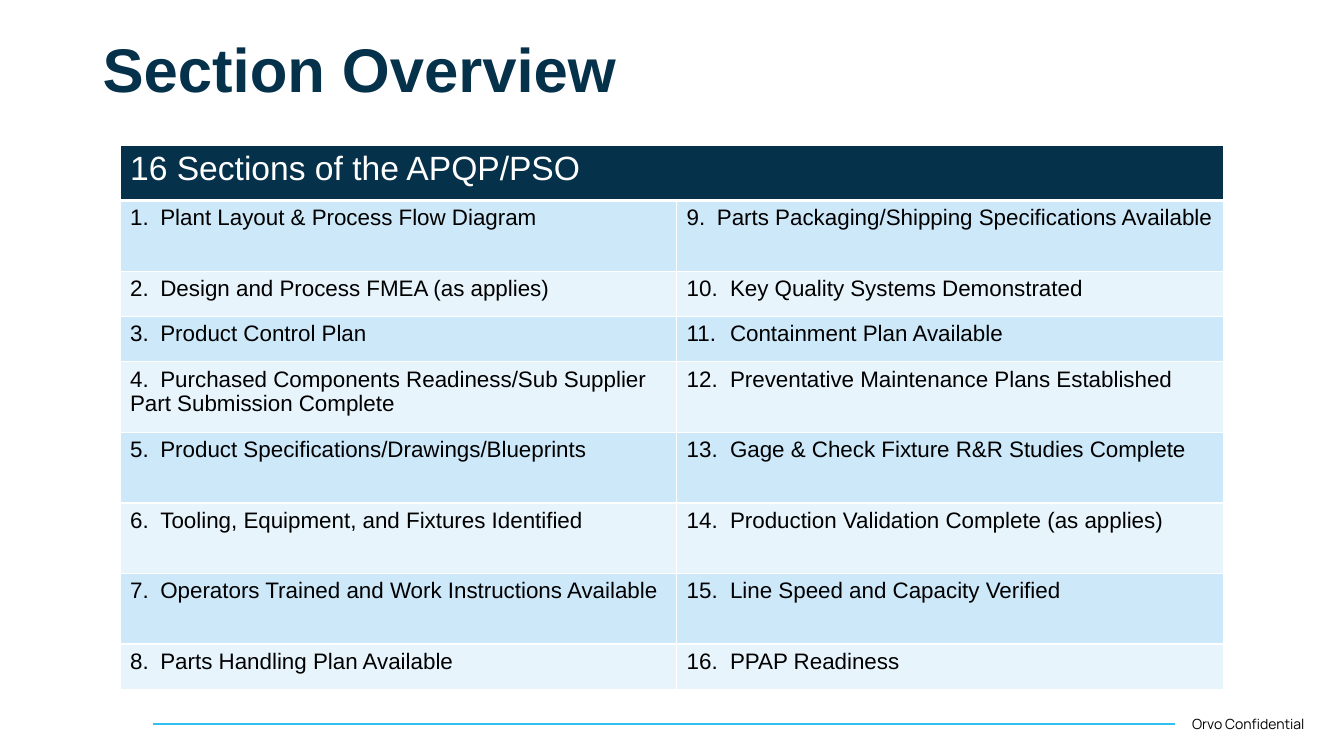
from dataclasses import dataclass

from lxml import etree
from pptx import Presentation
from pptx import util as u
from pptx.dml.color import RGBColor
from pptx.enum import shapes, text
from pptx.oxml.ns import qn

WIDTH, HEIGHT = u.Inches(13.33), u.Inches(7.5)


@dataclass(frozen=True)
class Theme:
    navy: str = "05314A"
    sky: str = "30BFEF"
    bands: tuple = ("CCE8F9", "E7F4FC")
    white: str = "FFFFFF"
    black: str = "000000"
    font: str = "Arial"
    footer_font: str = "Manrope"
    title_size: int = 44
    header_size: int = 24
    item_size: int = 16
    footer_size: int = 10


THEME = Theme()

SECTIONS = [
    "Plant Layout & Process Flow Diagram",
    "Design and Process FMEA (as applies)",
    "Product Control Plan",
    "Purchased Components Readiness/Sub Supplier Part Submission Complete",
    "Product Specifications/Drawings/Blueprints",
    "Tooling, Equipment, and Fixtures Identified",
    "Operators Trained and Work Instructions Available",
    "Parts Handling Plan Available",
    "Parts Packaging/Shipping Specifications Available",
    "Key Quality Systems Demonstrated",
    "Containment Plan Available",
    "Preventative Maintenance Plans Established",
    "Gage & Check Fixture R&R Studies Complete",
    "Production Validation Complete (as applies)",
    "Line Speed and Capacity Verified",
    "PPAP Readiness",
]
HEADER_HEIGHT, TALL, SHORT = 0.55, 0.7, 0.45
ROW_HEIGHTS = [HEADER_HEIGHT, TALL, SHORT, SHORT, TALL, TALL, TALL, TALL, SHORT]
COLUMN_WIDTHS = [5.52, 5.43]
TAB_STOPS = {1: 0.3, 2: 0.43}  # inches, by digits in the section number


def share_box(left, top, width, height):
    """Turn percentages of the slide into a box of lengths."""
    return [int(side * part / 100) for side, part in
            zip((WIDTH, HEIGHT, WIDTH, HEIGHT), (left, top, width, height))]


def write(para, wording, color, **formats):
    para.text = wording
    for name, value in formats.items():
        setattr(para.font, name, value)
    para.font.color.rgb = RGBColor.from_string(color)


def add_text(page, box, wording, color, frame_formats, **formats):
    frame = page.shapes.add_textbox(*box).text_frame
    for name, value in frame_formats.items():
        setattr(frame, name, value)
    write(frame.paragraphs[0], wording, color, **formats)
    return frame


def add_title(page, box):
    frame = add_text(page, box, "Section Overview", THEME.navy,
                     {"word_wrap": True, "vertical_anchor": text.MSO_ANCHOR.MIDDLE},
                     name=THEME.font, size=u.Pt(THEME.title_size), bold=True)
    frame.paragraphs[0].line_spacing = 0.9


def style_cell(cell, color, bottom=1):
    """Draw white borders, then fill the cell."""
    properties = cell._tc.get_or_add_tcPr()
    for side, points in {"L": 1, "R": 1, "T": 1, "B": bottom}.items():
        line = etree.SubElement(properties, qn(f"a:ln{side}"), w=str(u.Pt(points)))
        fill = etree.SubElement(line, qn("a:solidFill"))
        etree.SubElement(fill, qn("a:srgbClr"), val=THEME.white)
    cell.fill.solid()
    cell.fill.fore_color.rgb = RGBColor.from_string(color)


def add_tab_stop(para, inches):
    tabs = etree.SubElement(para._p.get_or_add_pPr(), qn("a:tabLst"))
    etree.SubElement(tabs, qn("a:tab"), pos=str(u.Inches(inches)), algn="l")


def add_sections_table(page, box):
    left, top, width, height = box
    grid = page.shapes.add_table(len(ROW_HEIGHTS), len(COLUMN_WIDTHS), *box).table
    for row, part in zip(grid.rows, ROW_HEIGHTS):
        row.height = int(height * part / sum(ROW_HEIGHTS))
    for column, part in zip(grid.columns, COLUMN_WIDTHS):
        column.width = int(width * part / sum(COLUMN_WIDTHS))

    header = grid.cell(0, 0)
    header.merge(grid.cell(0, 1))
    for cell in grid.rows[0].cells:
        style_cell(cell, THEME.navy, bottom=3)
    write(header.text_frame.paragraphs[0], "16 Sections of the APQP/PSO", THEME.white,
          name=THEME.font, size=u.Pt(THEME.header_size), bold=False)

    per_column = len(ROW_HEIGHTS) - 1
    for index, section in enumerate(SECTIONS):
        column, row = divmod(index, per_column)
        cell = grid.cell(row + 1, column)
        style_cell(cell, THEME.bands[row % 2])
        para = cell.text_frame.paragraphs[0]
        number = str(index + 1)
        add_tab_stop(para, TAB_STOPS[len(number)])
        write(para, f"{number}.\t{section}", THEME.black,
              name=THEME.font, size=u.Pt(THEME.item_size), bold=False)


def add_footer(page, box):
    """Place a rule across the box and the notice at its right end."""
    left, top, width, height = box
    middle = top + height // 2
    notice_left = left + int(width * 0.873)
    rule = page.shapes.add_connector(shapes.MSO_CONNECTOR.STRAIGHT, left, middle,
                                     left + int(width * 0.867), middle)
    rule.line.color.rgb = RGBColor.from_string(THEME.sky)
    rule.line.width = u.Pt(1.5)
    etree.SubElement(rule._element.spPr, qn("a:effectLst"))
    add_text(page, (notice_left, top, left + width - notice_left, height),
             "Orvo Confidential", THEME.black,
             {"word_wrap": False, "auto_size": text.MSO_AUTO_SIZE.SHAPE_TO_FIT_TEXT},
             name=THEME.footer_font, size=u.Pt(THEME.footer_size))


def build_overview(deck):
    page = deck.slides.add_slide(deck.slide_layouts[6])
    page.background.fill.solid()
    page.background.fill.fore_color.rgb = RGBColor.from_string(THEME.white)
    add_footer(page, share_box(11.4, 94, 87.7, 3.6))
    add_title(page, share_box(6.9, 3.73, 86.27, 11.73))
    add_sections_table(page, share_box(8.93, 19.2, 82.15, 72))


def main():
    deck = Presentation()
    deck.slide_width, deck.slide_height = WIDTH, HEIGHT
    build_overview(deck)
    deck.save("out.pptx")


if __name__ == "__main__":
    main()
